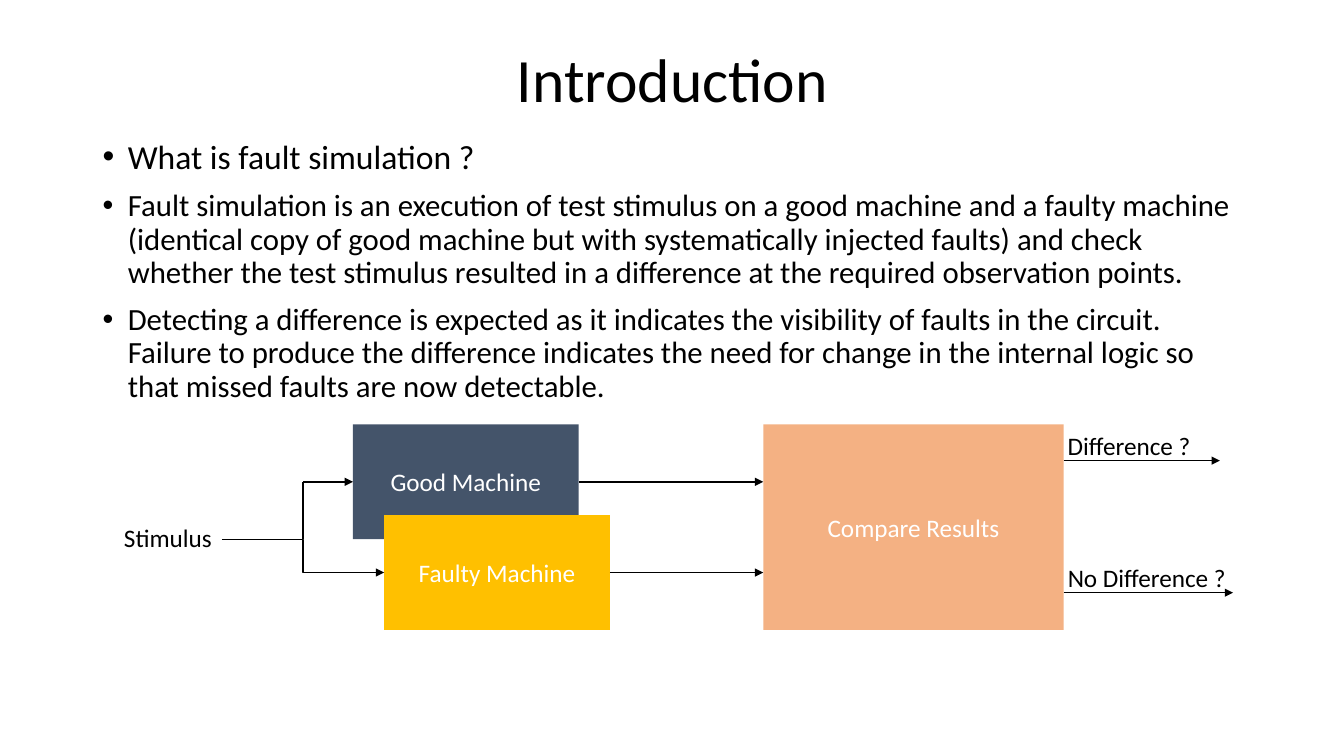
from lxml import etree
from pptx import Presentation
from pptx import util as u
from pptx.dml import color
from pptx.enum import shapes, text
from pptx.oxml import ns

FONT = "Calibri"
COLORS = {"ink": "000000", "light": "FFFFFF", "good": "44546A",
          "faulty": "FFC000", "compare": "F4B183"}
POINTS = [
    ("What is fault simulation ?", 24),
    ("Fault simulation is an execution of test stimulus on a good machine and a faulty machine "
     "(identical copy of good machine but with systematically injected faults) and check whether "
     "the test stimulus resulted in a difference at the required observation points.", 22),
    ("Detecting a difference is expected as it indicates the visibility of faults in the circuit. "
     "Failure to produce the difference indicates the need for change in the internal logic so "
     "that missed faults are now detectable.", 22),
]


def rgb(name):
    return color.RGBColor.from_string(COLORS[name])


def style(paragraph, size, ink="ink"):
    for run in paragraph.runs:
        run.font.name = FONT
        run.font.size = u.Pt(size)
        run.font.color.rgb = rgb(ink)


def text_frame(slide, box, wrap=True):
    frame = slide.shapes.add_textbox(*map(u.Inches, box)).text_frame
    frame.word_wrap = wrap
    return frame


def add_title(slide, box):
    frame = text_frame(slide, box)
    frame.vertical_anchor = text.MSO_ANCHOR.MIDDLE
    frame.text = "Introduction"
    heading = frame.paragraphs[0]
    heading.alignment = text.PP_ALIGN.CENTER
    heading.line_spacing = 0.9
    style(heading, 44)


def add_points(slide, box):
    frame = text_frame(slide, box)
    frame.text = "\n".join(point for point, _ in POINTS)
    for index, (paragraph, (_, size)) in enumerate(zip(frame.paragraphs, POINTS)):
        paragraph.line_spacing = 0.9
        if index:
            paragraph.space_before = u.Pt(10)
        props = paragraph._p.get_or_add_pPr()
        props.set("marL", str(u.Inches(0.25)))
        props.set("indent", str(-u.Inches(0.25)))
        etree.SubElement(props, ns.qn("a:buFont"), typeface="Arial")
        etree.SubElement(props, ns.qn("a:buChar"), char="•")
        style(paragraph, size)


def add_block(slide, box, caption, fill):
    block = slide.shapes.add_shape(shapes.MSO_SHAPE.RECTANGLE, *map(u.Inches, box))
    block.shadow.inherit = False
    block.fill.solid()
    block.fill.fore_color.rgb = rgb(fill)
    block.line.fill.background()
    frame = block.text_frame
    frame.text = caption
    frame.vertical_anchor = text.MSO_ANCHOR.MIDDLE
    frame.paragraphs[0].alignment = text.PP_ALIGN.CENTER
    style(frame.paragraphs[0], 18, "light")


def add_wire(slide, start, end, kind=shapes.MSO_CONNECTOR.STRAIGHT, arrow=True):
    wire = slide.shapes.add_connector(kind, *map(u.Inches, (*start, *end)))
    wire.line.color.rgb = rgb("ink")
    wire.line.width = u.Pt(1)
    if arrow:
        etree.SubElement(wire.line._get_or_add_ln(), ns.qn("a:tailEnd"), type="triangle")
    etree.SubElement(wire._element.spPr, ns.qn("a:effectLst"))


def add_label(slide, box, caption):
    frame = text_frame(slide, box, wrap=False)
    frame.margin_left = frame.margin_right = frame.margin_top = frame.margin_bottom = 0
    frame.auto_size = text.MSO_AUTO_SIZE.SHAPE_TO_FIT_TEXT
    frame.text = caption
    style(frame.paragraphs[0], 18)


def add_flow(slide, box):
    left, top, width, height = box
    machine_w, machine_h = 2.24, 1.14
    good_x, faulty_x = left + 2.27, left + 2.58
    faulty_y = top + height - machine_h
    good_mid, faulty_mid = top + machine_h / 2, faulty_y + machine_h / 2
    compare_x, compare_w = left + 6.34, 2.98
    compare_right = compare_x + compare_w
    stimulus_end, stimulus_y = left + 0.97, top + machine_h
    fork_x = (stimulus_end + faulty_x) / 2

    add_block(slide, (good_x, top, machine_w, machine_h), "Good Machine", "good")
    add_block(slide, (faulty_x, faulty_y, machine_w, machine_h), "Faulty Machine", "faulty")
    add_block(slide, (compare_x, top, compare_w, height), "Compare Results", "compare")

    add_label(slide, (left, stimulus_y - 0.17, 0.97, 0.3), "Stimulus")
    add_wire(slide, (stimulus_end, stimulus_y), (faulty_x, faulty_mid),
             shapes.MSO_CONNECTOR.ELBOW)
    add_wire(slide, (fork_x, stimulus_y), (fork_x, good_mid), arrow=False)
    add_wire(slide, (fork_x, good_mid), (good_x, good_mid))
    for machine_x, mid in ((good_x, good_mid), (faulty_x, faulty_mid)):
        add_wire(slide, (machine_x + machine_w, mid), (compare_x, mid))

    outcomes = (("Difference ?", 0.36, 1.36, left + 10.87),
                ("No Difference ?", 1.67, 1.75, left + width))
    for caption, offset, label_w, tip_x in outcomes:
        y = top + offset
        add_label(slide, (compare_right + 0.04, y - 0.3, label_w, 0.3), caption)
        add_wire(slide, (compare_right, y), (tip_x, y))


def main():
    deck = Presentation()
    deck.slide_width, deck.slide_height = u.Inches(13.33), u.Inches(7.5)
    slide = deck.slides.add_slide(deck.slide_layouts[6])
    add_title(slide, (0.92, 0.4, 11.5, 0.84))
    add_points(slide, (0.92, 1.34, 11.5, 4.94))
    add_flow(slide, (1.23, 4.21, 11, 2.04))
    deck.save("out.pptx")


if __name__ == "__main__":
    main()
